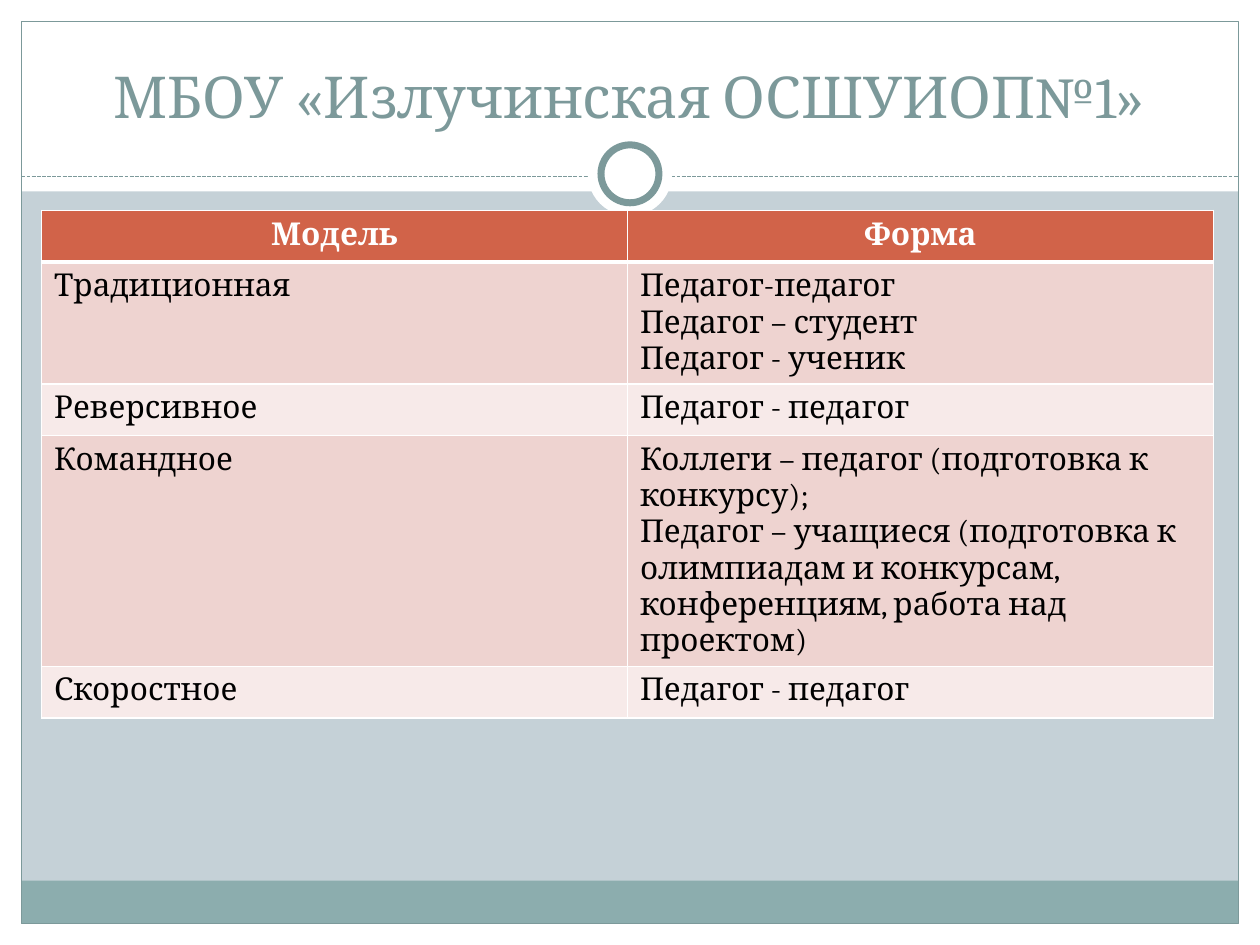
import pptx
import pptx.dml.color
import pptx.enum.dml
import pptx.enum.shapes
import pptx.enum.text
import pptx.oxml.ns
import pptx.util
from lxml import etree

Inches = pptx.util.Inches
RGBColor = pptx.dml.color.RGBColor
MSO_SHAPE = pptx.enum.shapes.MSO_SHAPE
PP_ALIGN = pptx.enum.text.PP_ALIGN

WHITE = RGBColor(0xFF, 0xFF, 0xFF)
BLACK = RGBColor(0, 0, 0)
BACKGROUND = RGBColor(0xC5, 0xD1, 0xD7)
FOOTER = RGBColor(0x8C, 0xAD, 0xAE)
TEAL = RGBColor(0x7C, 0x99, 0x9A)
HEADER = RGBColor(0xD1, 0x63, 0x49)
BANDS = (RGBColor(0xF7, 0xEA, 0xE9), RGBColor(0xEE, 0xD3, 0xD0))

TITLE = "МБОУ «Излучинская ОСШУИОП№1»"
ROWS = [
    ("Модель", "Форма"),
    ("Традиционная", "Педагог-педагог\nПедагог – студент\nПедагог - ученик"),
    ("Реверсивное", "Педагог - педагог"),
    ("Командное", "Коллеги – педагог (подготовка к конкурсу);\n"
     "Педагог – учащиеся (подготовка к олимпиадам и конкурсам, "
     "конференциям, работа над проектом)"),
    ("Скоростное", "Педагог - педагог"),
]


def write_text(text_frame, text, size=18, color=BLACK, bold=False, align=PP_ALIGN.LEFT):
    """Fill a text frame with one formatted paragraph per line of text."""
    text_frame.text = text
    for paragraph in text_frame.paragraphs:
        paragraph.alignment = align
        font = paragraph.runs[0].font
        font.name = "Cambria"
        font.size = pptx.util.Pt(size)
        font.bold = bold
        font.color.rgb = color


def add_panel(slide, box, kind=MSO_SHAPE.RECTANGLE, fill=None, line=None, width=0.75):
    """Add a preset shape with optional fill and outline."""
    shape = slide.shapes.add_shape(kind, *map(Inches, box))
    shape.shadow.inherit = False
    if fill is None:
        shape.fill.background()
    else:
        shape.fill.solid()
        shape.fill.fore_color.rgb = fill
    if line is None:
        shape.line.fill.background()
    else:
        shape.line.color.rgb = line
        shape.line.width = pptx.util.Pt(width)


def add_frame(slide, width, height, margin=0.17):
    """Draw the white margins, header, footer band and outline."""
    inner_width = width - 2 * margin
    for box in (
        (0, height - margin, width, margin),
        (0, 0, width, 1.52),
        (0, 0, margin, height),
        (width - margin, 0, margin, height),
    ):
        add_panel(slide, box, fill=WHITE)
    add_panel(slide, (margin, 6.99, inner_width, 0.34), fill=FOOTER)
    add_panel(slide, (margin, margin, inner_width, height - 2 * margin), line=TEAL)


def add_divider(slide, left, right, top):
    """Draw the dashed divider with a ring at its centre."""
    connector = slide.shapes.add_connector(
        pptx.enum.shapes.MSO_CONNECTOR.STRAIGHT,
        Inches(left), Inches(top), Inches(right), Inches(top))
    connector.line.color.rgb = TEAL
    connector.line.width = pptx.util.Pt(0.75)
    connector.line.dash_style = pptx.enum.dml.MSO_LINE.SQUARE_DOT
    properties = connector.element.find(pptx.oxml.ns.qn("p:spPr"))
    etree.SubElement(properties, pptx.oxml.ns.qn("a:effectLst"))
    center = (left + right) / 2
    middle = top - 0.02
    for diameter, line in ((0.67, None), (0.46, TEAL)):
        box = (center - diameter / 2, middle - diameter / 2, diameter, diameter)
        add_panel(slide, box, kind=MSO_SHAPE.OVAL, fill=WHITE, line=line, width=4)


def place_title(slide, box):
    """Place the title in its box, in front of the frame."""
    title = slide.shapes.title
    title.left, title.top, title.width, title.height = map(Inches, box)
    title.text_frame.vertical_anchor = pptx.enum.text.MSO_ANCHOR.BOTTOM
    title.text_frame.word_wrap = True
    write_text(title.text_frame, TITLE, size=33, color=TEAL, align=PP_ALIGN.CENTER)
    title.element.getparent().append(title.element)


def set_borders(cell, **widths):
    """Give a cell white borders with the named side widths in points."""
    properties = cell._tc.get_or_add_tcPr()
    for side in "LRTB":
        width = pptx.util.Pt(widths.get(side, 1))
        line = etree.SubElement(properties, pptx.oxml.ns.qn(f"a:ln{side}"), w=str(width))
        fill = etree.SubElement(line, pptx.oxml.ns.qn("a:solidFill"))
        etree.SubElement(fill, pptx.oxml.ns.qn("a:srgbClr"), val=str(WHITE))


def add_models_table(slide, left, top, width, row_height):
    """Add the table of mentoring models and forms."""
    table = slide.shapes.add_table(
        len(ROWS), len(ROWS[0]), Inches(left), Inches(top),
        Inches(width), Inches(row_height * len(ROWS))).table
    for row_index, texts in enumerate(ROWS):
        is_header = row_index == 0
        for column_index, text in enumerate(texts):
            cell = table.cell(row_index, column_index)
            set_borders(cell, T=3 if row_index == 1 else 1, B=3 if is_header else 1)
            cell.fill.solid()
            cell.fill.fore_color.rgb = HEADER if is_header else BANDS[row_index % 2]
            write_text(cell.text_frame, text, bold=is_header,
                       color=WHITE if is_header else BLACK,
                       align=PP_ALIGN.CENTER if is_header else PP_ALIGN.LEFT)


def main():
    """Build and save the presentation."""
    presentation = pptx.Presentation()
    presentation.slide_width = Inches(10)
    presentation.slide_height = Inches(7.5)
    slide = presentation.slides.add_slide(presentation.slide_layouts[5])
    slide.background.fill.solid()
    slide.background.fill.fore_color.rgb = BACKGROUND
    add_frame(slide, 10, 7.5)
    add_divider(slide, 0.17, 9.83, 1.4)
    place_title(slide, (0.33, 0.25, 9.33, 0.83))
    add_models_table(slide, 0.33, 1.67, 9.3, 0.41)
    presentation.save("out.pptx")


if __name__ == "__main__":
    main()
